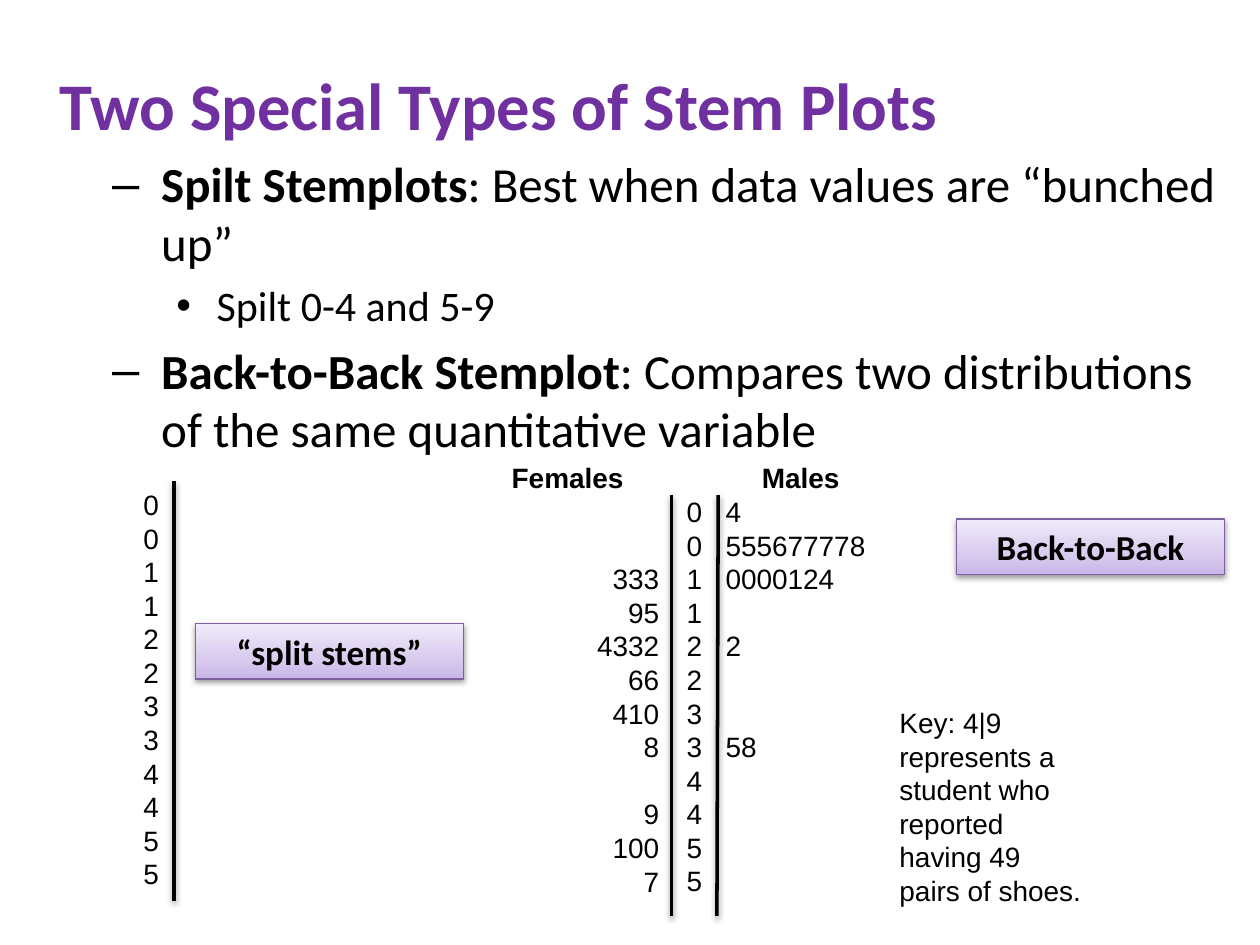
"""Build a slide on split stemplots and back-to-back stemplots."""
from copy import deepcopy
from dataclasses import dataclass
from typing import Optional

from lxml import etree
from pptx import Presentation
from pptx import util as u
from pptx.dml.color import RGBColor
from pptx.enum import shapes, text
from pptx.oxml.ns import qn


@dataclass(frozen=True)
class Theme:
    heading_font: str = "Calibri"
    plot_font: str = "Arial"
    ink: str = "000000"
    accent: str = "7030A0"
    label_edge: str = "7D60A0"
    label_stops: tuple = ((0, "C9B5E8"), (0.35, "D8CBEE"), (1, "F0EAF9"))
    title_size: float = 38
    label_size: float = 20
    plot_size: float = 16
    plot_pitch: float = 19.2


@dataclass(frozen=True)
class Box:
    left: float
    top: float
    width: float
    height: float

    def lengths(self) -> list:
        return [u.Inches(n) for n in (self.left, self.top, self.width, self.height)]


@dataclass(frozen=True)
class Point:
    term: str
    detail: str
    size: float
    margin: float = 0.81
    hang: float = 0.39
    bullet: str = "–"


@dataclass(frozen=True)
class Rule:
    start: tuple
    end: tuple


@dataclass(frozen=True)
class Label:
    wording: str
    box: Box


THEME = Theme()
ALIGN = text.PP_ALIGN
TITLE = "Two Special Types of Stem Plots"
POINTS = (
    Point("Spilt Stemplots", ": Best when data values are “bunched up”", 28),
    Point("", "Spilt 0-4 and 5-9", 24, 1.25, 0.32, "•"),
    Point("Back-to-Back Stemplot",
          ": Compares two distributions of the same quantitative variable", 28),
)
STEMS = [str(digit) for digit in range(6) for _ in range(2)]
FEMALES = ("", "", "333", "95", "4332", "66", "410", "8", "", "9", "100", "7")
MALES = ("4", "555677778", "0000124", "", "2", "", "", "58", "", "", "", "")
KEY = "Key: 4|9 represents a student who reported having 49 pairs of shoes."
RULES = (
    Rule((1.38, 3.82), (1.38, 7.15)),
    Rule((5.7, 3.93), (5.69, 7.27)),
    Rule((5.33, 3.93), (5.33, 7.27)),
)
LABELS = (
    Label("“split stems”", Box(1.55, 4.95, 2.13, 0.44)),
    Label("Back-to-Back", Box(7.59, 4.12, 2.13, 0.44)),
)


def style_run(run, font: str, size: float, color: str, bold: bool = False) -> None:
    run.font.name = font
    run.font.size = u.Pt(size)
    run.font.bold = bold
    run.font.color.rgb = RGBColor.from_string(color)


def add_frame(slide, box: Box, wrap: bool = True):
    frame = slide.shapes.add_textbox(*box.lengths()).text_frame
    frame.word_wrap = wrap
    return frame


def add_shadow(shape) -> None:
    effects = etree.SubElement(shape._element.spPr, qn("a:effectLst"))
    shadow = etree.SubElement(effects, qn("a:outerShdw"), blurRad="40000",
                              dist="20000", dir="5400000", rotWithShape="0")
    color = etree.SubElement(shadow, qn("a:srgbClr"), val=THEME.ink)
    etree.SubElement(color, qn("a:alpha"), val="38000")


def add_outline(slide, box: Box) -> None:
    frame = add_frame(slide, box)
    frame.margin_left = frame.margin_right = u.Inches(0.05)
    frame.margin_top = frame.margin_bottom = u.Inches(0.1)
    frame.text = TITLE
    style_run(frame.paragraphs[0].runs[0], THEME.heading_font,
              THEME.title_size, THEME.accent, True)
    for point in POINTS:
        paragraph = frame.add_paragraph()
        paragraph.space_before = u.Pt(point.size * 0.2)
        for wording, bold in ((point.term, True), (point.detail, False)):
            if wording:
                run = paragraph.add_run()
                run.text = wording
                style_run(run, THEME.heading_font, point.size, THEME.ink, bold)
        props = paragraph._p.get_or_add_pPr()
        props.set("marL", str(u.Inches(point.margin)))
        props.set("indent", str(-u.Inches(point.hang)))
        etree.SubElement(props, qn("a:buFont"), typeface=THEME.plot_font)
        etree.SubElement(props, qn("a:buChar"), char=point.bullet)


def add_plot_text(slide, box: Box, rows, heading: Optional[str] = None,
                  align=ALIGN.LEFT, heading_indent: float = 0,
                  leaf_tab: float = 0, wrap: bool = True) -> None:
    frame = add_frame(slide, box, wrap)
    lines = ([heading] if heading else []) + list(rows)
    skipped = 0
    for index, line in enumerate(lines):
        if not line:
            skipped += 1
            continue
        is_heading = bool(heading) and index == 0
        paragraph = frame.paragraphs[0] if index == 0 else frame.add_paragraph()
        paragraph.text = line
        paragraph.alignment = ALIGN.CENTER if is_heading else align
        paragraph.line_spacing = u.Pt(THEME.plot_pitch)
        paragraph.space_before = u.Pt(THEME.plot_pitch * skipped)
        skipped = 0
        props = paragraph._p.get_or_add_pPr()
        if is_heading:
            props.set("marL", str(u.Inches(heading_indent)))
        elif leaf_tab:
            tabs = etree.SubElement(props, qn("a:tabLst"))
            etree.SubElement(tabs, qn("a:tab"), pos=str(u.Inches(leaf_tab)), algn="l")
        for run in paragraph.runs:
            style_run(run, THEME.plot_font, THEME.plot_size, THEME.ink, is_heading)


def add_rule(slide, rule: Rule) -> None:
    ends = [u.Inches(n) for n in rule.start + rule.end]
    stem_line = slide.shapes.add_connector(shapes.MSO_CONNECTOR.STRAIGHT, *ends)
    stem_line.line.width = u.Pt(2)
    stem_line.line.color.rgb = RGBColor.from_string(THEME.ink)
    add_shadow(stem_line)


def add_label(slide, label: Label) -> None:
    plate = slide.shapes.add_shape(shapes.MSO_SHAPE.RECTANGLE, *label.box.lengths())
    plate.fill.gradient()
    plate.fill.gradient_angle = 90
    stop_list = plate._element.spPr.find(".//" + qn("a:gsLst"))
    stop_list.insert(1, deepcopy(stop_list[0]))
    for stop, (position, color) in zip(plate.fill.gradient_stops, THEME.label_stops):
        stop.position = position
        stop.color.rgb = RGBColor.from_string(color)
    plate.line.width = u.Pt(0.75)
    plate.line.color.rgb = RGBColor.from_string(THEME.label_edge)
    add_shadow(plate)
    frame = plate.text_frame
    frame.text = label.wording
    frame.vertical_anchor = text.MSO_ANCHOR.MIDDLE
    frame.paragraphs[0].alignment = ALIGN.CENTER
    style_run(frame.paragraphs[0].runs[0], THEME.heading_font,
              THEME.label_size, THEME.ink, True)


def main() -> None:
    deck = Presentation()
    deck.slide_width, deck.slide_height = u.Inches(10), u.Inches(7.5)
    slide = deck.slides.add_slide(deck.slide_layouts[6])
    add_outline(slide, Box(0.42, 0.41, 9.3, 3.22))
    add_plot_text(slide, Box(1.04, 3.82, 0.33, 3.33), STEMS, wrap=False)
    add_plot_text(slide, Box(7.04, 5.55, 1.68, 1.72), [KEY])
    male_rows = [f"{stem}\t{leaves}" if leaves else stem
                 for stem, leaves in zip(STEMS, MALES)]
    add_plot_text(slide, Box(5.35, 3.61, 1.65, 3.6), male_rows, "Males",
                  heading_indent=0.36, leaf_tab=0.31)
    add_plot_text(slide, Box(3.68, 3.61, 1.65, 3.6), FEMALES, "Females", ALIGN.RIGHT)
    for rule in RULES:
        add_rule(slide, rule)
    for label in LABELS:
        add_label(slide, label)
    deck.save("out.pptx")


if __name__ == "__main__":
    main()
